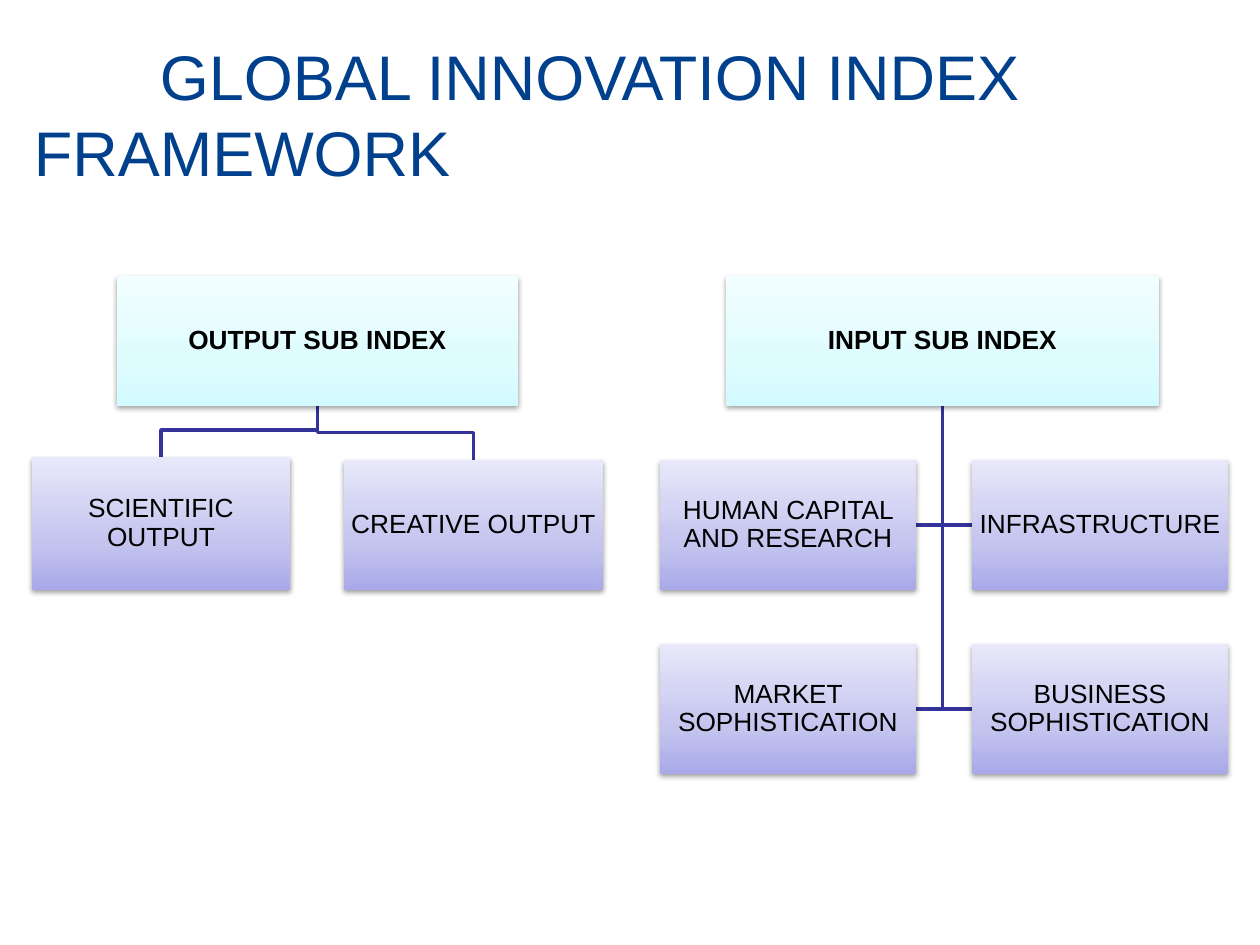
from lxml import etree
from pptx import Presentation
from pptx.dml.color import RGBColor
from pptx.enum.shapes import MSO_SHAPE
from pptx.enum.text import MSO_ANCHOR, PP_ALIGN
from pptx.oxml import parse_xml
from pptx.oxml.ns import nsdecls, qn
from pptx.util import Cm, Pt

TITLE_BLUE = RGBColor(0x00, 0x40, 0x8C)
LINE_BLUE = RGBColor(0x33, 0x33, 0x99)
BLACK = RGBColor(0, 0, 0)
CYANS = [RGBColor.from_string(c) for c in ("D3FBFF", "DFFCFF", "F2FEFF")]
LILACS = [RGBColor.from_string(c) for c in ("A9A9E9", "C4C4EF", "E8E8FA")]
STOPS = (0, 35, 100)

TITLE_FONT = {"name": "Arial", "size": Pt(36), "bold": False}
BOX_FONT = {"name": "Arial", "size": Pt(15), "bold": False}
HEAD_FONT = {**BOX_FONT, "bold": True}

BOX_H = 2.62
HEAD_TOP = 5.56
HEAD_BOTTOM = HEAD_TOP + BOX_H
ELBOW_GAP = 0.55

OUTPUT_HEAD = ("OUTPUT SUB INDEX", 2.36, HEAD_TOP, 8.08, BOX_H)
OUTPUT_BOXES = [
    ("SCIENTIFIC OUTPUT", 0.64, 9.22, 5.21, 2.67),
    ("CREATIVE OUTPUT", 6.93, 9.27, 5.23, BOX_H),
]
INPUT_HEAD = ("INPUT SUB INDEX", 14.63, HEAD_TOP, 8.74, BOX_H)
INPUT_ROWS = [
    (9.27, ("HUMAN CAPITAL AND RESEARCH", "INFRASTRUCTURE")),
    (12.98, ("MARKET SOPHISTICATION", "BUSINESS SOPHISTICATION")),
]
INPUT_COLUMNS = (13.31, 19.6)
INPUT_W = 5.15


def format_font(font, values, color):
    for key, value in values.items():
        setattr(font, key, value)
    font.color.rgb = color


def add_title(s, text):
    title = s.shapes.title
    box = {"left": Cm(0.43), "top": Cm(0.64), "width": Cm(24.97), "height": Cm(3.3)}
    for key, value in box.items():
        setattr(title, key, value)
    tf = title.text_frame
    tf.word_wrap = True
    tf.vertical_anchor = MSO_ANCHOR.MIDDLE
    p = tf.paragraphs[0]
    p.alignment = PP_ALIGN.LEFT
    p.line_spacing = 1.0
    pPr = p._p.get_or_add_pPr()
    pPr.set("marL", "0")
    pPr.set("indent", str(Cm(2.54)))
    r = p.add_run()
    r.text = text
    format_font(r.font, TITLE_FONT, TITLE_BLUE)


def add_gradient(sp, colors):
    stops = "".join(
        f'<a:gs pos="{pos * 1000}"><a:srgbClr val="{color}"/></a:gs>'
        for pos, color in zip(STOPS, colors)
    )
    sp._element.spPr.find(qn("a:prstGeom")).addnext(parse_xml(
        f'<a:gradFill {nsdecls("a")} rotWithShape="1"><a:gsLst>{stops}</a:gsLst>'
        '<a:lin ang="16200000" scaled="0"/></a:gradFill>'
    ))


def add_shadow(sp):
    sp.shadow.inherit = False
    effects = sp._element.spPr.find(qn("a:effectLst"))
    shadow = etree.SubElement(
        effects, qn("a:outerShdw"), blurRad=str(Pt(3.1)), dist=str(Pt(1.6)),
        dir="5400000", rotWithShape="0")
    color = etree.SubElement(shadow, qn("a:srgbClr"), val="000000")
    etree.SubElement(color, qn("a:alpha"), val="38000")


def add_box(s, text, x, y, w, h, colors=LILACS, font=BOX_FONT):
    sp = s.shapes.add_shape(MSO_SHAPE.RECTANGLE, Cm(x), Cm(y), Cm(w), Cm(h))
    add_gradient(sp, colors)
    sp.line.fill.background()
    add_shadow(sp)
    tf = sp.text_frame
    tf.word_wrap = True
    tf.vertical_anchor = MSO_ANCHOR.MIDDLE
    for side in ("left", "right", "top", "bottom"):
        setattr(tf, f"margin_{side}", Cm(0.03))
    p = tf.paragraphs[0]
    p.alignment = PP_ALIGN.CENTER
    p.line_spacing = 0.9
    r = p.add_run()
    r.text = text
    format_font(r.font, font, BLACK)


def add_branch(s, points):
    start, *rest = [(Cm(x), Cm(y)) for x, y in points]
    builder = s.shapes.build_freeform(*start)
    builder.add_line_segments(rest, close=False)
    sp = builder.convert_to_shape()
    sp.fill.background()
    sp.line.color.rgb = LINE_BLUE
    sp.line.width = Pt(2)
    sp.shadow.inherit = False


def center_x(box):
    return box[1] + box[3] / 2


def add_output_tree(s):
    trunk = center_x(OUTPUT_HEAD)
    for box in OUTPUT_BOXES:
        x, top = center_x(box), box[2]
        elbow = top - ELBOW_GAP
        add_branch(s, [(trunk, HEAD_BOTTOM), (trunk, elbow), (x, elbow), (x, top)])
    add_box(s, *OUTPUT_HEAD, CYANS, HEAD_FONT)
    for box in OUTPUT_BOXES:
        add_box(s, *box)


def add_input_tree(s):
    trunk = center_x(INPUT_HEAD)
    left, right = INPUT_COLUMNS
    for top, _ in INPUT_ROWS:
        y = top + BOX_H / 2
        for edge in (left + INPUT_W, right):
            add_branch(s, [(trunk, HEAD_BOTTOM), (trunk, y), (edge, y)])
    add_box(s, *INPUT_HEAD, CYANS, HEAD_FONT)
    for top, labels in INPUT_ROWS:
        for x, label in zip(INPUT_COLUMNS, labels):
            add_box(s, label, x, top, INPUT_W, BOX_H)


def main():
    prs = Presentation()
    prs.slide_width, prs.slide_height = Cm(25.4), Cm(19.05)
    s = prs.slides.add_slide(prs.slide_layouts[5])
    add_title(s, "GLOBAL INNOVATION INDEX FRAMEWORK")
    add_output_tree(s)
    add_input_tree(s)
    prs.save("out.pptx")


if __name__ == "__main__":
    main()
